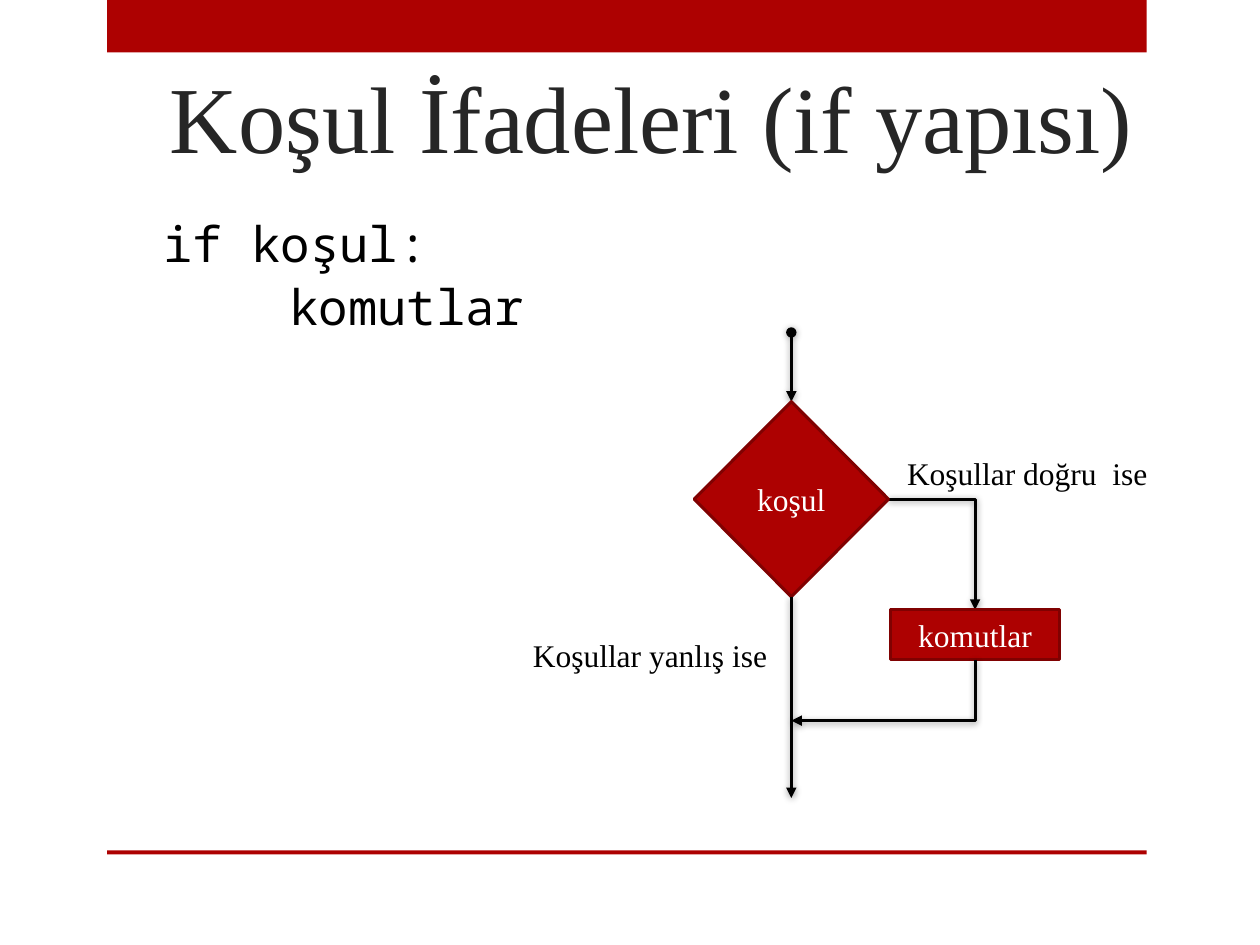
from lxml import etree
from pptx import Presentation
from pptx.dml.color import RGBColor
from pptx.enum.shapes import MSO_CONNECTOR, MSO_SHAPE
from pptx.enum.text import MSO_ANCHOR, PP_ALIGN
from pptx.oxml.ns import qn
from pptx.util import Pt

RECT, DIAMOND = MSO_SHAPE.RECTANGLE, MSO_SHAPE.DIAMOND
STRAIGHT, ELBOW = MSO_CONNECTOR.STRAIGHT, MSO_CONNECTOR.ELBOW
TOP, MIDDLE, BOTTOM = MSO_ANCHOR.TOP, MSO_ANCHOR.MIDDLE, MSO_ANCHOR.BOTTOM
LEFT, CENTER = PP_ALIGN.LEFT, PP_ALIGN.CENTER

THEME = {
    "red": "AD0101", "edge": "800101", "title": "262626",
    "ink": "000000", "white": "FFFFFF",
    "serif": "Times New Roman", "mono": "Noto Sans Mono",
    "title_pt": 54, "code_pt": 28, "label_pt": 18, "line_pt": 1.75,
}

# Content; boxes are left, top, width, height in points
TITLE = "Koşul İfadeleri (if yapısı)"
CODE = [("if koşul:", 0), ("komutlar", 1)]  # text, indent level
INDENT = 72
BANDS = [(61.2, 0, 594, 30), (61.2, 486, 594, 2.2)]
LABELS = [("Koşullar doğru  ise", (511.2, 255.6, 157, 29)),
          ("Koşullar yanlış ise", (297.4, 360, 152, 29))]

# Flowchart geometry
MAIN_X, BRANCH_X = 452.2, 557.2
START_Y, MERGE_Y, END_Y = 190, 411.8, 456
DECISION = (MAIN_X - 55.5, 229.5, 111, 111.5)
ACTION = (BRANCH_X - 48.4, 348.5, 96.8, 28.5)
NODES = [("koşul", DIAMOND, DECISION), ("komutlar", RECT, ACTION)]


def rgb(name):
    return RGBColor.from_string(THEME[name])


def style(p, size, color, font="serif", align=LEFT):
    p.alignment = align
    p.font.size = Pt(THEME[size])
    p.font.name = THEME[font]
    p.font.color.rgb = rgb(color)


def add_box(slide, kind, box, edge=None):
    s = slide.shapes.add_shape(kind, *map(Pt, box))
    s.shadow.inherit = False
    s.fill.solid()
    s.fill.fore_color.rgb = rgb("red")
    if edge:
        s.line.color.rgb = rgb(edge)
        s.line.width = Pt(THEME["line_pt"])
    else:
        s.line.fill.background()
    return s


def add_text(slide, box, anchor=TOP, wrap=True):
    tf = slide.shapes.add_textbox(*map(Pt, box)).text_frame
    tf.word_wrap = wrap
    tf.vertical_anchor = anchor
    return tf


def add_arrow(slide, start, end, kind=STRAIGHT, head=None):
    c = slide.shapes.add_connector(kind, *map(Pt, start + end))
    c.line.color.rgb = rgb("ink")
    c.line.width = Pt(THEME["line_pt"])
    ln = c.line._get_or_add_ln()
    if head:
        etree.SubElement(ln, qn("a:headEnd"), type=head)
    etree.SubElement(ln, qn("a:tailEnd"), type="triangle")
    effects = etree.SubElement(c._element.spPr, qn("a:effectLst"))
    shadow = etree.SubElement(effects, qn("a:outerShdw"), blurRad=str(Pt(4)),
                              dist=str(Pt(1)), dir=str(88 * 60000), rotWithShape="0")
    color = etree.SubElement(shadow, qn("a:srgbClr"), val=THEME["ink"])
    etree.SubElement(color, qn("a:alpha"), val="40000")
    if kind == ELBOW:
        c._element.spPr.find(qn("a:prstGeom")).set("prst", "bentConnector2")
    return c


def add_down_left_arrow(slide, start, end):
    """A right-then-down elbow turned a quarter, so it runs down, then left."""
    (x1, y1), (x2, y2) = start, end
    w, h = y2 - y1, x1 - x2
    left, top = (x1 + x2 - w) / 2, (y1 + y2 - h) / 2
    c = add_arrow(slide, (left, top), (left + w, top + h), ELBOW)
    c._element.spPr.find(qn("a:xfrm")).set("rot", str(90 * 60000))


def add_flowchart(slide):
    decision_bottom = DECISION[1] + DECISION[3]
    decision_right = (DECISION[0] + DECISION[2], DECISION[1] + DECISION[3] / 2)
    action_bottom = ACTION[1] + ACTION[3]

    add_arrow(slide, (MAIN_X, START_Y), (MAIN_X, DECISION[1]), head="oval")
    add_arrow(slide, decision_right, (BRANCH_X, ACTION[1]), ELBOW)
    for text, kind, box in NODES:
        tf = add_box(slide, kind, box, "edge").text_frame
        tf.text = text
        tf.vertical_anchor = MIDDLE
        style(tf.paragraphs[0], "label_pt", "white", align=CENTER)
    add_arrow(slide, (MAIN_X, decision_bottom), (MAIN_X, END_Y))
    add_down_left_arrow(slide, (BRANCH_X, action_bottom), (MAIN_X, MERGE_Y))
    for text, box in LABELS:
        tf = add_text(slide, box, wrap=False)
        tf.text = text
        style(tf.paragraphs[0], "label_pt", "ink")


def main():
    prs = Presentation()
    prs.slide_width, prs.slide_height = Pt(720), Pt(540)
    slide = prs.slides.add_slide(prs.slide_layouts[6])

    for band in BANDS:
        add_box(slide, RECT, band)

    tf = add_text(slide, (90, 14.4, 594, 87.8), BOTTOM)
    tf.text = TITLE
    style(tf.paragraphs[0], "title_pt", "title")

    tf = add_text(slide, (86.4, 122.4, 633.6, 135.4))
    tf.text = "\n".join(text for text, _ in CODE)
    for p, (_, level) in zip(tf.paragraphs, CODE):
        style(p, "code_pt", "ink", "mono")
        p.line_spacing = 0.9
        p.space_before = Pt(5.6)
        p._p.get_or_add_pPr().set("marL", str(Pt(level * INDENT)))

    add_flowchart(slide)
    prs.save("out.pptx")


if __name__ == "__main__":
    main()
